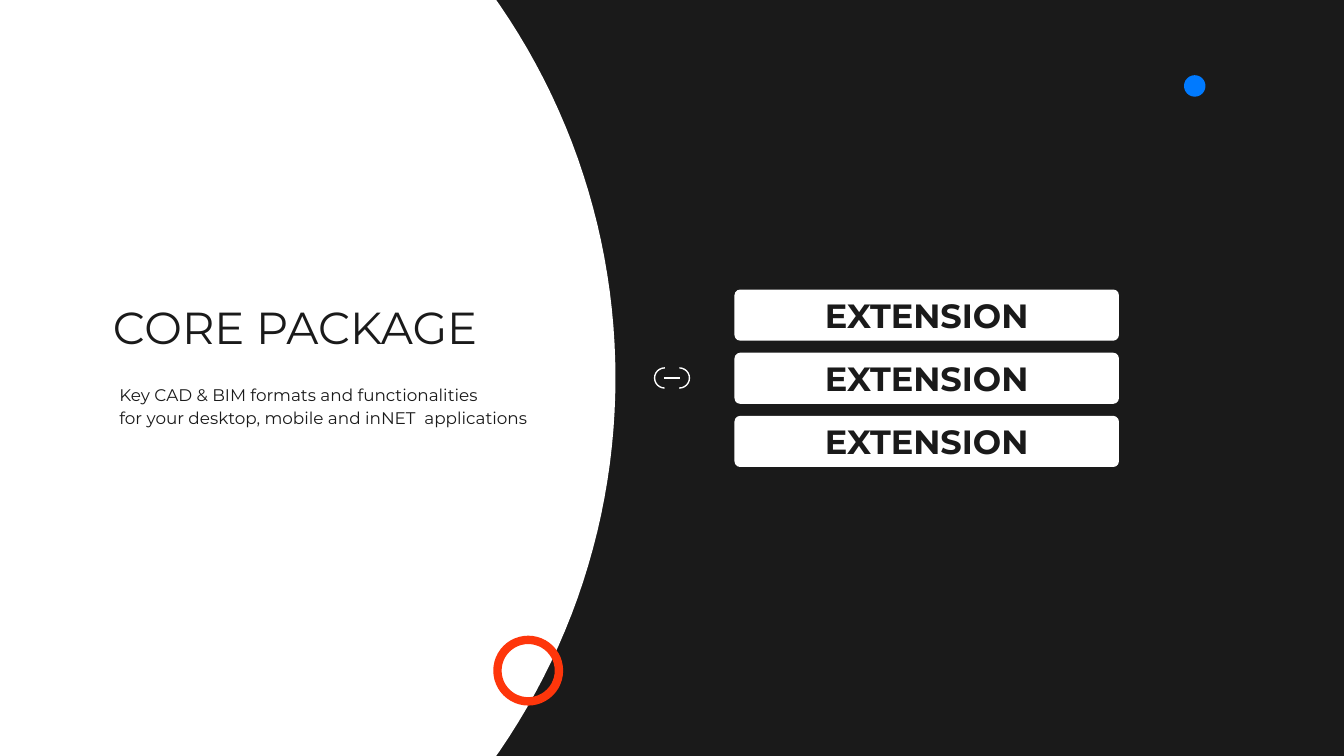
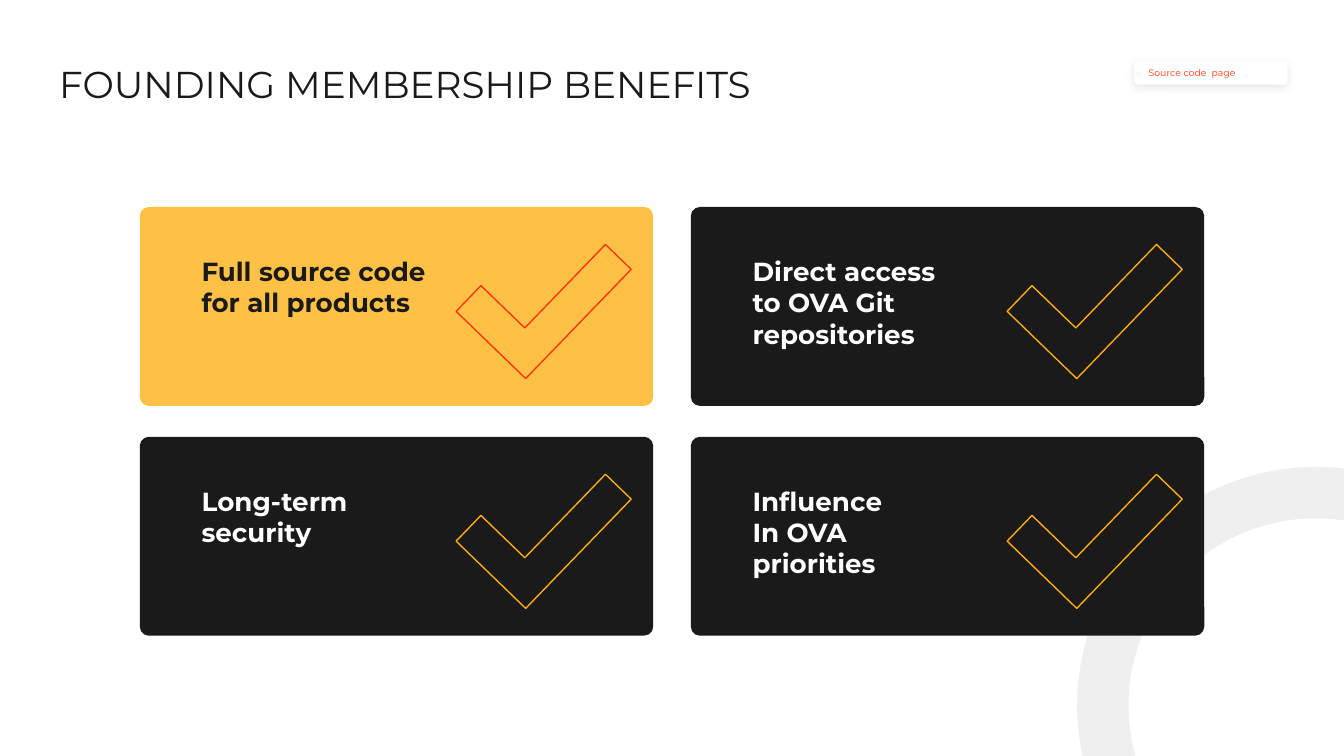
"""Build two slides: the core package with its extensions, and the member benefits."""
from math import cos, pi, sin

from lxml import etree
from pptx import Presentation
from pptx.dml.color import RGBColor
from pptx.enum.shapes import MSO_CONNECTOR, MSO_SHAPE
from pptx.enum.text import MSO_ANCHOR, MSO_AUTO_SIZE, PP_ALIGN
from pptx.oxml.ns import qn
from pptx.util import Inches, Pt

ROUND, DONUT, OVAL = MSO_SHAPE.ROUNDED_RECTANGLE, MSO_SHAPE.DONUT, MSO_SHAPE.OVAL
ARC, CORNER = MSO_SHAPE.ARC, MSO_SHAPE.CORNER
STRAIGHT = MSO_CONNECTOR.STRAIGHT
TOP, MIDDLE = MSO_ANCHOR.TOP, MSO_ANCHOR.MIDDLE
LEFT, CENTER = PP_ALIGN.LEFT, PP_ALIGN.CENTER
FIXED = MSO_AUTO_SIZE.NONE

INK = RGBColor(0x1A, 0x1A, 0x1A)
WHITE = RGBColor(0xFF, 0xFF, 0xFF)
RED = RGBColor(0xFE, 0x36, 0x0B)
BLUE = RGBColor(0x00, 0x7A, 0xFF)
GOLD = RGBColor(0xFF, 0xC1, 0x45)
AMBER = RGBColor(0xFF, 0xAC, 0x15)
PALE = RGBColor(0xEF, 0xEF, 0xEF)
GREY = RGBColor(0xB7, 0xB7, 0xB7)
FONT = "Montserrat"
WIDE, HIGH = 10, 5.625
MID = HIGH / 2

CORE = "CORE PACKAGE"
BLURB = ["Key CAD & BIM formats and functionalities",
         "for your desktop, mobile and inNET  applications"]
ADDONS = ["EXTENSION"] * 3
PERKS = "FOUNDING MEMBERSHIP BENEFITS"
TAG = "Source code  page"
CARDS = [
    (["Full source code", "for all products"], GOLD, INK, RED),
    (["Direct access", "to OVA Git\nrepositories"], INK, WHITE, AMBER),
    (["Long-term\nsecurity"], INK, WHITE, AMBER),
    (["Influence\nIn OVA\npriorities"], INK, WHITE, AMBER),
]


def write(box, lines, size=14, color=INK, bold=False, align=LEFT, anchor=TOP,
          left=0.1, top=0.1, space=1.0):
    """Fill a box with formatted paragraphs."""
    frame = box.text_frame
    frame.word_wrap, frame.auto_size = True, FIXED
    frame.vertical_anchor = anchor
    frame.margin_left, frame.margin_top = Inches(left), Inches(top)
    frame.margin_right = frame.margin_bottom = Inches(0.1)
    for i, line in enumerate(lines):
        para = frame.add_paragraph() if i else frame.paragraphs[0]
        para.text = line
        para.alignment, para.line_spacing = align, space
        para.space_before = Pt(0)
        for run in para.runs:
            font = run.font
            font.name, font.size, font.bold = FONT, Pt(size), bold
            font.color.rgb = color


def paint(item, fill=None, line=None, width=0.75):
    """Set the fill and outline of a shape without a shadow."""
    item.shadow.inherit = False
    if fill is None:
        item.fill.background()
    else:
        item.fill.solid()
        item.fill.fore_color.rgb = fill
    if line is None:
        item.line.fill.background()
    else:
        item.line.color.rgb, item.line.width = line, Pt(width)
    return item


def draw(shapes, kind, x, y, w, h, adj=(), turn=0, **look):
    """Add a preset shape."""
    item = shapes.add_shape(kind, Inches(x), Inches(y), Inches(w), Inches(h))
    for i, value in enumerate(adj):
        item.adjustments[i] = value
    item.rotation = turn
    return paint(item, **look)


def shade(item, color, alpha, blur, dist):
    """Cast a soft shadow straight down."""
    effects = item.element.spPr.find(qn("a:effectLst"))
    outer = etree.SubElement(effects, qn("a:outerShdw"), blurRad=str(Pt(blur)),
                             dist=str(Pt(dist)), dir=str(90 * 60000))
    tone = etree.SubElement(outer, qn("a:srgbClr"), val=str(color))
    etree.SubElement(tone, qn("a:alpha"), val=str(alpha * 1000))


def title(slide, text, x, y, w, h, **style):
    """Place the title in front of what is already drawn."""
    box = slide.shapes.title
    box.left, box.top, box.width, box.height = map(Inches, (x, y, w, h))
    box.element.getparent().append(box.element)
    write(box, [text], **style)


def start(deck, back):
    """Add a title slide with a plain background."""
    slide = deck.slides.add_slide(deck.slide_layouts[5])
    slide.background.fill.solid()
    slide.background.fill.fore_color.rgb = back
    return slide


def disc(shapes, x, radius, steps=120):
    """Draw the right half of a large white disc."""
    turns = [pi * i / steps - pi / 2 for i in range(steps + 1)]
    dots = [(Inches(x + radius * cos(t)), Inches(MID + radius * sin(t)))
            for t in turns]
    path = shapes.build_freeform(*dots[0])
    path.add_line_segments(dots[1:], close=True)
    paint(path.convert_to_shape(), fill=WHITE)


def link(shapes, x, size=0.15, gap=0.11):
    """Draw a chain link centred on x."""
    group = shapes.add_group_shape().shapes
    for side, turn in ((1, 0), (-1, 180)):
        draw(group, ARC, x + (side * gap - size) / 2, MID - size / 2, size, size,
             adj=(162, 55.03), turn=turn, line=WHITE)
    bar = group.add_connector(STRAIGHT, Inches(x - 0.06), Inches(MID),
                              Inches(x + 0.06), Inches(MID))
    bar.line.color.rgb, bar.line.width = WHITE, Pt(0.75)
    etree.SubElement(bar.element.spPr, qn("a:effectLst"))


def core(deck):
    """Build the core package slide."""
    slide = start(deck, INK)
    shapes = slide.shapes
    disc(shapes, -0.32, 4.9)
    link(shapes, WIDE / 2)
    title(slide, CORE, 0.74, 2.13, 3.51, 0.61, size=24)
    blurb = shapes.add_textbox(*map(Inches, (0.79, 2.74, 3.41, 0.61)))
    write(blurb, BLURB, size=9, space=1.15)
    draw(shapes, DONUT, 3.67, 4.73, 0.52, 0.52, adj=[0.12], fill=RED)
    draw(shapes, OVAL, 8.81, 0.56, 0.16, 0.16, fill=BLUE)
    for row, name in enumerate(ADDONS):
        box = draw(shapes, ROUND, 5.47, 2.16 + 0.47 * row, 2.85, 0.37,
                   adj=[0.1], fill=WHITE, line=WHITE)
        write(box, [name], size=18, bold=True, align=CENTER, anchor=MIDDLE)


def perks(deck):
    """Build the member benefits slide."""
    slide = start(deck, WHITE)
    shapes = slide.shapes
    tag = draw(shapes, ROUND, 8.44, 0.46, 1.14, 0.17, adj=[0.17], fill=WHITE)
    shade(tag, GREY, 35, 4.5, 1.5)
    write(tag, [TAG], size=5, color=RED, anchor=MIDDLE)
    draw(shapes, DONUT, 8.14, 3.6, 3.3, 3.3, adj=[0.04], line=PALE, width=18)
    title(slide, PERKS, 0.34, 0.31, 5.78, 0.63, size=20, anchor=MIDDLE)
    for i, (lines, fill, ink, edge) in enumerate(CARDS):
        row, col = divmod(i, 2)
        x, y = 1.04 + 4.1 * col, 1.54 + 1.71 * row
        card = draw(shapes, ROUND, x, y, 3.82, 1.48, adj=[0.045], fill=fill)
        write(card, lines, color=ink, bold=True, left=0.44, top=0.34)
        draw(shapes, CORNER, x + 2.44, y + 0.26, 1.13, 0.72,
             adj=(0.37, 0.37), turn=314, line=edge)


def main():
    """Save the deck."""
    deck = Presentation()
    deck.slide_width, deck.slide_height = Inches(WIDE), Inches(HIGH)
    core(deck)
    perks(deck)
    deck.save("out.pptx")


if __name__ == "__main__":
    main()
